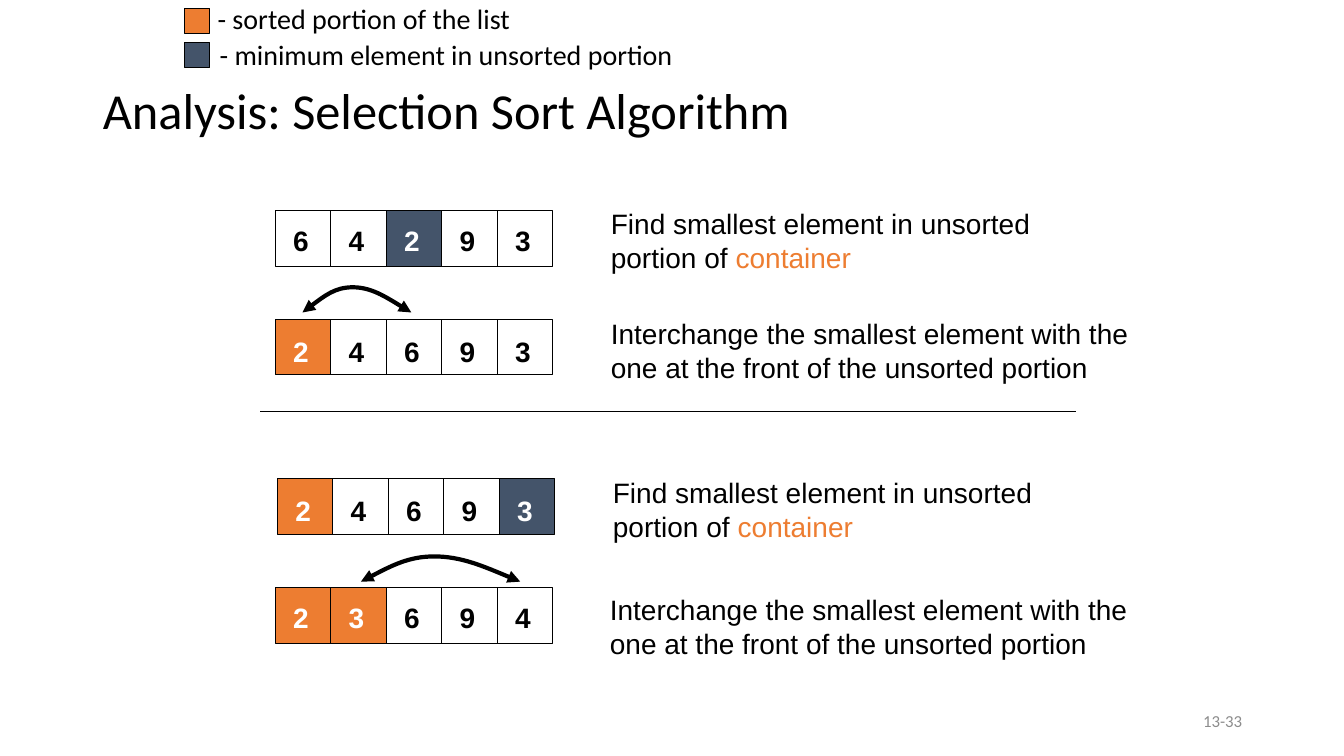
from dataclasses import dataclass
from pptx import Presentation
from pptx.dml.color import RGBColor
from pptx.enum.shapes import MSO_CONNECTOR as Connector, MSO_SHAPE as Preset
from pptx.enum.text import MSO_ANCHOR as Anchor, MSO_AUTO_SIZE as AutoSize, PP_ALIGN as Align
from pptx.oxml.ns import qn
from pptx.shapes.autoshape import Shape
from pptx.slide import Slide
from pptx.text.text import Font
from pptx.util import Inches, Pt
from lxml.etree import SubElement


@dataclass(frozen=True)
class Theme:
    black: str = "000000"
    white: str = "FFFFFF"
    sorted_fill: str = "ED7D31"
    minimum_fill: str = "44546A"
    number_color: str = "8C8C8C"
    heading_font: str = "Calibri"
    body_font: str = "Arial"
    title_size: int = 36
    body_size: int = 20
    number_size: int = 12
    thin_line: float = 0.75
    arrow_line: float = 3


@dataclass(frozen=True)
class Step:
    left: float
    top: float
    digits: str
    sorted_count: int
    minimum: int | None
    digit_drop: float
    note_box: tuple[float, float, float]
    note: str
    keyword: str = ""


@dataclass(frozen=True)
class SwapArrow:
    left: float
    top: float
    width: float
    height: float = 0.25


@dataclass(frozen=True)
class LegendEntry:
    top: float
    fill: str
    label: str
    label_box: tuple[float, float, float]


THEME = Theme()
CELL = 0.55
FIND = "Find smallest element in unsorted portion of "
SWAP = "Interchange the smallest element with the one at the front of the unsorted portion"
STEPS = [
    Step(2.73, 2.09, "64293", 0, 2, 0.08, (5.96, 2, 4.72), FIND, "container"),
    Step(2.73, 3.17, "24693", 1, None, 0.1, (5.96, 3.09, 5.46), SWAP),
    Step(2.75, 4.75, "24693", 1, 4, 0.1, (5.98, 4.67, 4.72), FIND, "container"),
    Step(2.73, 5.83, "23694", 2, None, 0.08, (5.95, 5.83, 5.55), SWAP),
]
ARROWS = [SwapArrow(3, 2.85, 1.08), SwapArrow(3.58, 5.52, 1.58)]
ARC_CURVES = [
    [(0.15, 0.5), (0.3, 0), (0.46, 0)],
    [(0.63, 0), (0.81, 0.5), (1, 1)],
]
LEGEND = [
    LegendEntry(0.08, THEME.sorted_fill, "- sorted portion of the list", (2.06, -0.03, 3.13)),
    LegendEntry(0.42, THEME.minimum_fill, "- minimum element in unsorted portion", (2.08, 0.32, 4.74)),
]


def style_font(font: Font, name: str, size: int, color: str, bold: bool = False) -> None:
    font.name = name
    font.size = Pt(size)
    font.bold = bold
    font.color.rgb = RGBColor.from_string(color)


def add_square(page: Slide, left: float, top: float, side: float, fill: str | None) -> None:
    square = page.shapes.add_shape(Preset.RECTANGLE, Inches(left), Inches(top), Inches(side), Inches(side))
    square.shadow.inherit = False
    if fill:
        square.fill.solid()
        square.fill.fore_color.rgb = RGBColor.from_string(fill)
    else:
        square.fill.background()
    square.line.color.rgb = RGBColor.from_string(THEME.black)
    square.line.width = Pt(THEME.thin_line)


def add_label(page: Slide, left: float, top: float, width: float, height: float, text: str,
              font_name: str, size: int, color: str, bold: bool = False, wrap: bool = True) -> Shape:
    box = page.shapes.add_textbox(Inches(left), Inches(top), Inches(width), Inches(height))
    box.text_frame.word_wrap = wrap
    box.text_frame.auto_size = AutoSize.SHAPE_TO_FIT_TEXT
    para = box.text_frame.paragraphs[0]
    para.add_run().text = text
    style_font(para.font, font_name, size, color, bold)
    return box


def add_step(page: Slide, step: Step) -> None:
    for index, digit in enumerate(step.digits):
        left = step.left + index * CELL
        fill = None
        if index < step.sorted_count:
            fill = THEME.sorted_fill
        elif index == step.minimum:
            fill = THEME.minimum_fill
        add_square(page, left, step.top, CELL, fill)
        add_label(page, left + 0.08, step.top + step.digit_drop, 0.31, 0.43, digit, THEME.body_font,
                  THEME.body_size, THEME.white if fill else THEME.black, bold=True)
    note = add_label(page, *step.note_box, 0.77, step.note, THEME.body_font, THEME.body_size, THEME.black)
    if step.keyword:
        span = note.text_frame.paragraphs[0].add_run()
        span.text = step.keyword
        span.font.color.rgb = RGBColor.from_string(THEME.sorted_fill)


def add_swap_arrow(page: Slide, arrow: SwapArrow) -> None:
    left, top = Inches(arrow.left), Inches(arrow.top)
    width, height = Inches(arrow.width), Inches(arrow.height)
    builder = page.shapes.build_freeform(left, top + height)
    ends = [curve[-1] for curve in ARC_CURVES]
    builder.add_line_segments([(left + x * width, top + y * height) for x, y in ends], close=False)
    arc = builder.convert_to_shape()
    arc.shadow.inherit = False
    arc.fill.background()
    arc.line.color.rgb = RGBColor.from_string(THEME.black)
    arc.line.width = Pt(THEME.arrow_line)

    outline = arc.element.spPr.find(f".//{qn('a:path')}")
    for segment in outline.findall(qn("a:lnTo")):
        outline.remove(segment)
    for curve in ARC_CURVES:
        bezier = SubElement(outline, qn("a:cubicBezTo"))
        for x, y in curve:
            SubElement(bezier, qn("a:pt"), x=str(round(x * width)), y=str(round(y * height)))
    stroke = arc.element.spPr.find(qn("a:ln"))
    for end in ("a:headEnd", "a:tailEnd"):
        SubElement(stroke, qn(end), type="triangle")


def add_divider(page: Slide) -> None:
    divider = page.shapes.add_connector(Connector.STRAIGHT, Inches(2.58), Inches(4.08), Inches(10.67), Inches(4.08))
    divider.line.color.rgb = RGBColor.from_string(THEME.black)
    divider.line.width = Pt(THEME.thin_line)
    SubElement(divider.element.spPr, qn("a:effectLst"))


def set_title(page: Slide, text: str) -> None:
    title = page.shapes.title
    title.left, title.top = Inches(0.92), Inches(0.4)
    title.width, title.height = Inches(11.5), Inches(1.45)
    frame = title.text_frame
    frame.text = text
    frame.word_wrap = True
    frame.auto_size = AutoSize.NONE
    frame.vertical_anchor = Anchor.MIDDLE
    para = frame.paragraphs[0]
    para.alignment = Align.LEFT
    para.line_spacing = 0.9
    style_font(para.font, THEME.heading_font, THEME.title_size, THEME.black)


def add_page_number(page: Slide, text: str) -> None:
    box = add_label(page, 9.42, 6.95, 3, 0.4, text, THEME.heading_font, THEME.number_size, THEME.number_color)
    box.text_frame.auto_size = AutoSize.NONE
    box.text_frame.vertical_anchor = Anchor.MIDDLE
    box.text_frame.paragraphs[0].alignment = Align.RIGHT


def main() -> None:
    deck = Presentation()
    deck.slide_width, deck.slide_height = Inches(13.33), Inches(7.5)
    page = deck.slides.add_slide(deck.slide_layouts.get_by_name("Title Only"))
    set_title(page, "Analysis: Selection Sort Algorithm")
    for step in STEPS:
        add_step(page, step)
    for arrow in ARROWS:
        add_swap_arrow(page, arrow)
    add_divider(page)
    for entry in LEGEND:
        add_square(page, 1.83, entry.top, 0.25, entry.fill)
        add_label(page, *entry.label_box, 0.44, entry.label, THEME.heading_font,
                  THEME.body_size, THEME.black, wrap=False)
    add_page_number(page, "13-33")
    deck.save("out.pptx")


if __name__ == "__main__":
    main()
